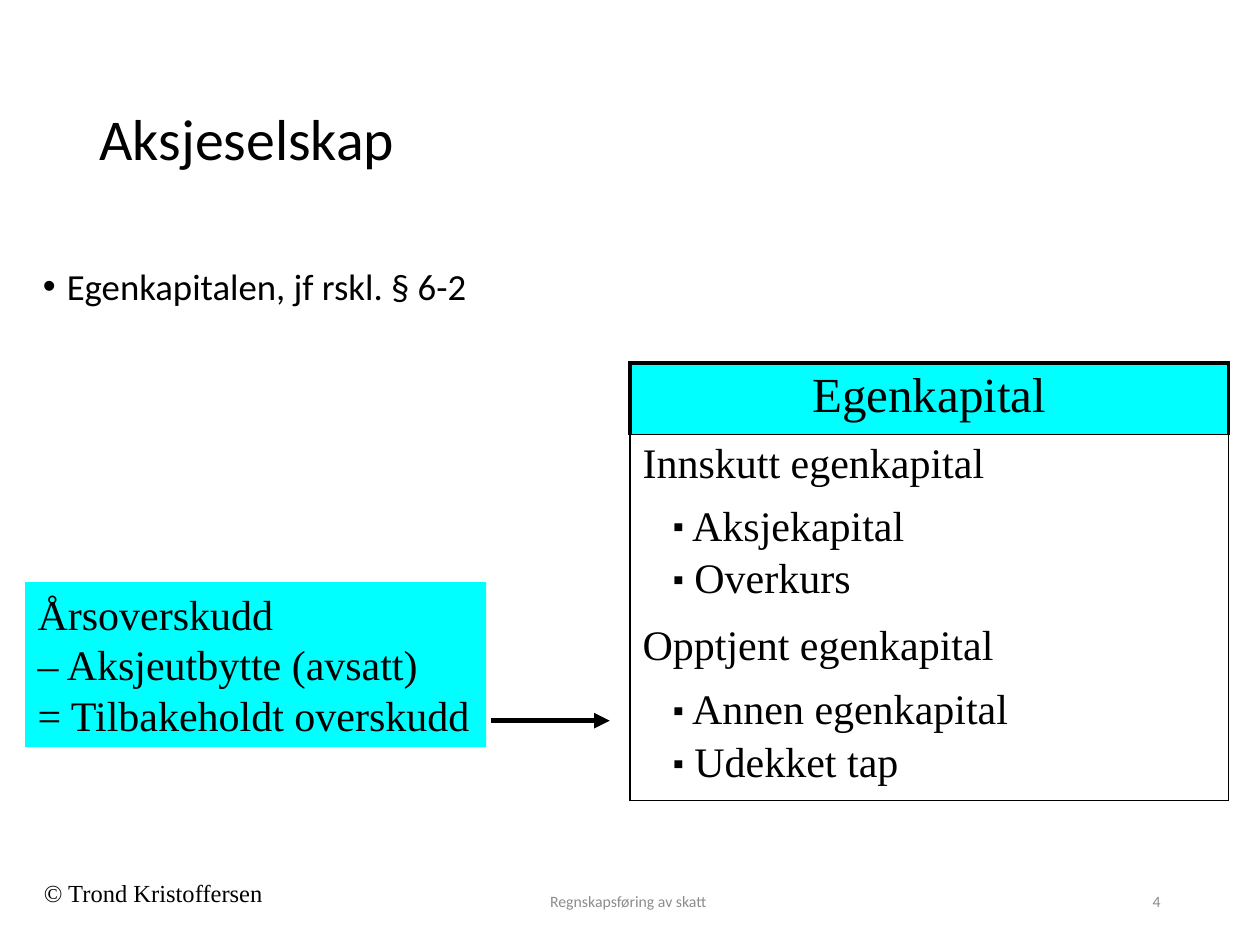
from typing import NamedTuple
from lxml.etree import SubElement
from pptx import Presentation
from pptx.dml.color import RGBColor
from pptx.enum.shapes import MSO_CONNECTOR, MSO_SHAPE
from pptx.enum.text import MSO_ANCHOR, PP_ALIGN
from pptx.oxml.ns import qn
from pptx.util import Inches, Pt

WIDTH, HEIGHT = Inches(10), Inches(7.5)
COLS, ROWS = 100, 75
SERIF, SANS = "Times New Roman", "Calibri"
BLACK, CYAN, GREY = "000000", "00FFFF", "8C8C8C"


class Box(NamedTuple):
    left: float
    top: float
    width: float
    height: float


class Style(NamedTuple):
    font: str
    size: float
    color: str = BLACK
    align: PP_ALIGN = PP_ALIGN.LEFT
    anchor: MSO_ANCHOR = MSO_ANCHOR.TOP


class Label(NamedTuple):
    box: Box
    text: str
    style: Style


class Entry(NamedTuple):
    lines: list[str]
    height: float
    bullet: bool = False


def across(cols: float) -> int:
    return round(WIDTH * cols / COLS)


def down(rows: float) -> int:
    return round(HEIGHT * rows / ROWS)


def place(box: Box) -> tuple[int, int, int, int]:
    return across(box.left), down(box.top), across(box.width), down(box.height)


def paint(target, color: str) -> None:
    target.solid()
    target.fore_color.rgb = RGBColor.from_string(color)


def write(frame, text: str, style: Style) -> None:
    frame.text = text
    frame.vertical_anchor = style.anchor
    for para in frame.paragraphs:
        para.alignment = style.align
        for run in para.runs:
            run.font.name = style.font
            run.font.size = Pt(style.size)
            run.font.color.rgb = RGBColor.from_string(style.color)


def mark(para, char: str, scale: int = 100) -> None:
    props = para._p.get_or_add_pPr()
    SubElement(props, qn("a:buSzPct"), val=str(scale * 1000))
    SubElement(props, qn("a:buFont"), typeface="Arial")
    SubElement(props, qn("a:buChar"), char=char)


def fill_holder(holder, label: Label) -> None:
    holder.left, holder.top, holder.width, holder.height = place(label.box)
    write(holder.text_frame, label.text, label.style)
    holder.text_frame.paragraphs[0].line_spacing = 0.9


def add_label(slide, label: Label) -> None:
    frame = slide.shapes.add_textbox(*place(label.box)).text_frame
    frame.word_wrap = True
    write(frame, label.text, label.style)


def edge(cell, widths: dict[str, float]) -> None:
    props = cell._tc.get_or_add_tcPr()
    for side in "LRTB":
        width = widths.get(side, 0)
        line = SubElement(props, qn(f"a:ln{side}"), w=str(Pt(width)))
        if width:
            fill = SubElement(line, qn("a:solidFill"))
            SubElement(fill, qn("a:srgbClr"), val=BLACK)
        else:
            SubElement(line, qn("a:noFill"))


def add_equity(slide, box: Box, entries: list[Entry], indent: float) -> None:
    table = slide.shapes.add_table(len(entries), 2, *place(box)).table
    table.first_row = table.horz_banding = False
    for col, width in zip(table.columns, (indent, box.width - indent)):
        col.width = across(width)
    last = len(entries) - 1
    for row, entry in enumerate(entries):
        table.rows[row].height = down(entry.height)
        head = row == 0
        first, second = table.cell(row, 0), table.cell(row, 1)
        if not entry.bullet:
            first.merge(second)
        thick = 2.25 if head else 1
        level = {"T": thick if row < 2 else 0, "B": 1 if row in (0, last) else 0}
        edge(first, level | {"L": thick, "R": 0 if entry.bullet else thick})
        edge(second, level | {"R": thick})
        for cell in (first, second):
            if head:
                paint(cell.fill, CYAN)
            else:
                cell.fill.background()
        style = Style(SERIF, 28, align=PP_ALIGN.CENTER) if head else Style(SERIF, 24)
        frame = (second if entry.bullet else first).text_frame
        write(frame, "\n".join(entry.lines), style)
        for para in frame.paragraphs[1:]:
            para.space_before = Pt(3.5)
        if entry.bullet:
            for para in frame.paragraphs:
                mark(para, "▪", 75)


def add_profit(group, box: Box, lines: list[str]) -> None:
    rect = group.shapes.add_shape(MSO_SHAPE.RECTANGLE, *place(box))
    rect.shadow.inherit = False
    paint(rect.fill, CYAN)
    rect.line.fill.background()
    rect.text_frame.word_wrap = False
    write(rect.text_frame, "\n".join(lines), Style(SERIF, 24))


def add_arrow(group, start: float, end: float, row: float) -> None:
    arrow = group.shapes.add_connector(
        MSO_CONNECTOR.STRAIGHT, across(start), down(row), across(end), down(row))
    paint(arrow.line.fill, BLACK)
    arrow.line.width = Pt(3)
    SubElement(arrow.line._get_or_add_ln(), qn("a:tailEnd"), type="triangle")
    SubElement(arrow._element.spPr, qn("a:effectLst"))


def main() -> None:
    deck = Presentation()
    deck.slide_width, deck.slide_height = WIDTH, HEIGHT
    slide = deck.slides.add_slide(deck.slide_layouts[1])
    title, body = slide.placeholders

    fill_holder(title, Label(Box(6.9, 4, 86.2, 14.5), "Aksjeselskap",
                             Style(SANS, 33, anchor=MSO_ANCHOR.MIDDLE)))
    fill_holder(body, Label(Box(2.4, 20.8, 96.9, 47.5),
                            "Egenkapitalen, jf rskl. § 6-2", Style(SANS, 21)))
    point = body.text_frame.paragraphs[0]
    point.space_before = Pt(7.5)
    props = point._p.get_or_add_pPr()
    props.set("marL", str(across(1.9)))
    props.set("indent", str(-across(1.9)))
    mark(point, "•")

    small = Style(SANS, 9, GREY, PP_ALIGN.CENTER, MSO_ANCHOR.MIDDLE)
    for label in (
        Label(Box(2.5, 69.2, 20.8, 3.3), "© Trond Kristoffersen", Style(SERIF, 14)),
        Label(Box(33.1, 69.5, 33.8, 4), "Regnskapsføring av skatt ", small),
        Label(Box(70.6, 69.5, 22.5, 4), "4", small._replace(align=PP_ALIGN.RIGHT)),
    ):
        add_label(slide, label)

    add_equity(slide, Box(50, 28.8, 47.5, 25), [
        Entry(["Egenkapital"], 3.5),
        Entry(["Innskutt egenkapital"], 3.3),
        Entry([" Aksjekapital", " Overkurs"], 6.6, True),
        Entry(["Opptjent egenkapital"], 5.1),
        Entry([" Annen egenkapital", " Udekket tap"], 6.5, True),
    ], indent=2.4)

    group = slide.shapes.add_group_shape()
    add_profit(group, Box(2, 46.2, 36.6, 13.1),
               ["Årsoverskudd", "– Aksjeutbytte (avsatt)", "= Tilbakeholdt overskudd"])
    add_arrow(group, 39, 48.4, 57.2)
    deck.save("out.pptx")


if __name__ == "__main__":
    main()
